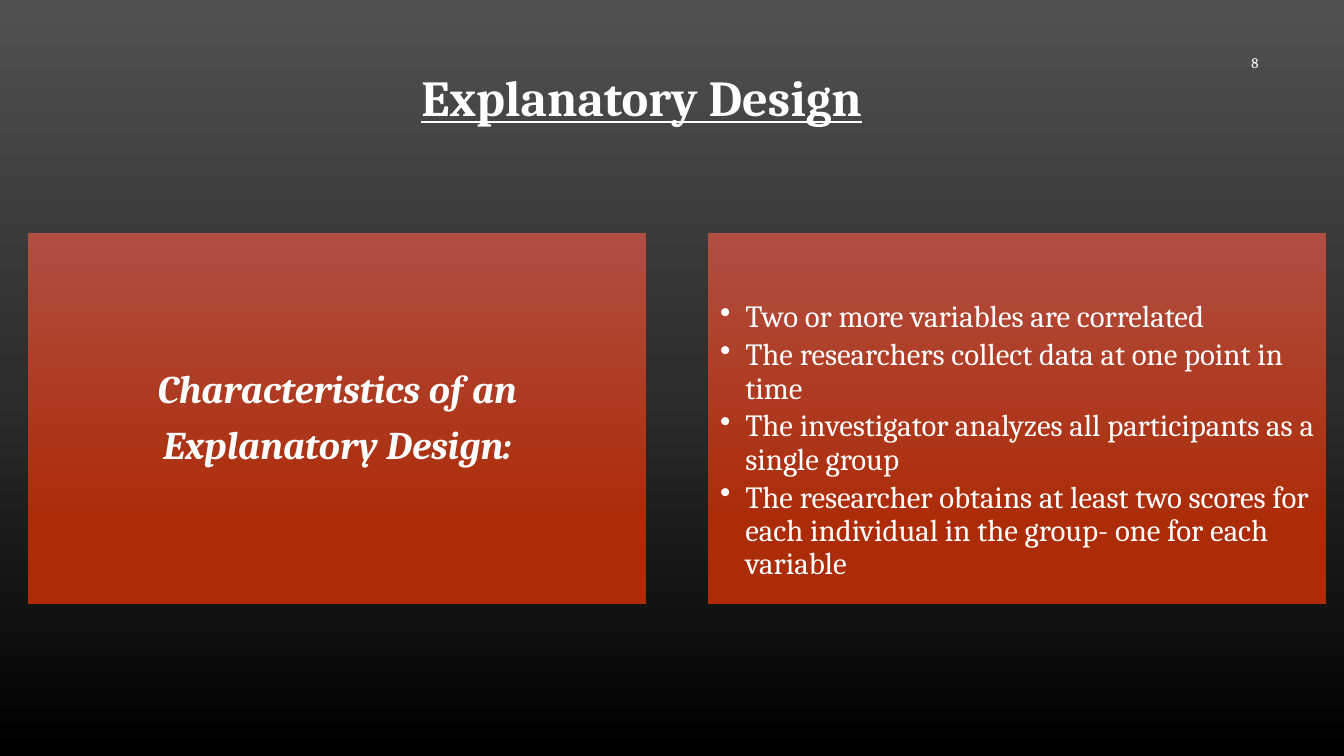
from copy import deepcopy
from dataclasses import dataclass

from pptx import Presentation
from pptx.dml.color import RGBColor
from pptx.enum.shapes import MSO_SHAPE
from pptx.enum.text import MSO_ANCHOR, MSO_AUTO_SIZE, PP_ALIGN
from pptx.oxml.ns import qn
from pptx.util import Inches, Pt
from lxml.etree import SubElement


@dataclass(frozen=True)
class Theme:
    """Colours, gradients, font and type sizes of the deck."""
    font: str = "Cambria"
    text: str = "FFFFFF"
    backdrop: tuple = ((0, "515151"), (0.5, "2E2E2E"), (1, "000000"))
    panel: tuple = ((0, "B14E42"), (0.78, "AC2C08"))
    title_size: float = 36
    heading_size: float = 28
    bullet_size: float = 22
    number_size: float = 10.5


THEME = Theme()
SLIDE_WIDTH, SLIDE_HEIGHT = 13.33, 7.5
PANEL_LEFT, PANEL_TOP, PANEL_WIDTH, PANEL_HEIGHT = 0.28, 2.31, 6.13, 3.68
PANEL_PITCH = PANEL_WIDTH * 1.1
PADDING = 0.12
HEADING = ("Characteristics of an", "Explanatory Design:")
BULLETS = (
    "Two or more variables are correlated",
    "The researchers collect data at one point in time",
    "The investigator analyzes all participants as a single group",
    "The researcher obtains at least two scores for each individual in the group- one for each variable",
)


def fill_gradient(fill, owner, stops):
    """Fill with a top-to-bottom gradient of (position, colour) stops."""
    fill.gradient()
    fill.gradient_angle = 270
    stop_list = owner.find(".//" + qn("a:gsLst"))
    for _ in stops[2:]:
        stop_list.append(deepcopy(stop_list[-1]))
    for stop, (position, color) in zip(fill.gradient_stops, stops):
        stop.position = position
        stop.color.rgb = RGBColor.from_string(color)


def format_paragraph(para, size, align, **styles):
    """Set the alignment and font of a paragraph."""
    para.alignment = align
    para.font.name = THEME.font
    para.font.size = Pt(size)
    para.font.color.rgb = RGBColor.from_string(THEME.text)
    for style, value in styles.items():
        setattr(para.font, style, value)


def add_bullet(para, indent):
    """Give a paragraph a round bullet with a hanging indent."""
    properties = para._p.get_or_add_pPr()
    properties.set("marL", str(Inches(indent)))
    properties.set("indent", str(-Inches(indent)))
    SubElement(properties, qn("a:buChar"), char="•")


def place_title(page, text, left, top, width, height):
    """Move and format the title placeholder."""
    title = page.shapes.title
    title.left, title.top, title.width, title.height = map(Inches, (left, top, width, height))
    title.text_frame.text = text
    title.text_frame.auto_size = MSO_AUTO_SIZE.NONE
    title.text_frame.vertical_anchor = MSO_ANCHOR.TOP
    format_paragraph(title.text_frame.paragraphs[0], THEME.title_size,
                     PP_ALIGN.CENTER, bold=True, underline=True)


def add_page_number(page, number, left, top, width, height):
    """Add the page number, right-aligned in its box."""
    frame = page.shapes.add_textbox(*map(Inches, (left, top, width, height))).text_frame
    frame.word_wrap = True
    frame.vertical_anchor = MSO_ANCHOR.MIDDLE
    frame.text = str(number)
    format_paragraph(frame.paragraphs[0], THEME.number_size, PP_ALIGN.RIGHT)


def add_panel(page, column, lines, size, gap, anchor, align,
              top_padding=PADDING, bullet_indent=0, **styles):
    """Add a gradient panel in a column, with one paragraph per line."""
    left = PANEL_LEFT + column * PANEL_PITCH
    box = page.shapes.add_shape(MSO_SHAPE.RECTANGLE, *map(
        Inches, (left, PANEL_TOP, PANEL_WIDTH, PANEL_HEIGHT)))
    box.shadow.inherit = False
    box.line.fill.background()
    fill_gradient(box.fill, box._element, THEME.panel)
    frame = box.text_frame
    frame.word_wrap = True
    frame.vertical_anchor = anchor
    frame.margin_left = frame.margin_right = frame.margin_bottom = Inches(PADDING)
    frame.margin_top = Inches(top_padding)
    frame.text = "\n".join(lines)
    for para in frame.paragraphs:
        if bullet_indent:
            add_bullet(para, bullet_indent)
        para.line_spacing = 0.9
        para.space_after = Pt(size * gap)
        format_paragraph(para, size, align, **styles)


def build_slide(deck):
    """Build the slide with a heading panel and a bullet panel."""
    page = deck.slides.add_slide(deck.slide_layouts[5])
    fill_gradient(page.background.fill, page._element, THEME.backdrop)
    add_page_number(page, 8, 9.58, 0.42, 3, 0.4)
    place_title(page, "Explanatory Design", 2.77, 0.61, 7.19, 0.71)
    add_panel(page, 0, HEADING, THEME.heading_size, 0.35, MSO_ANCHOR.MIDDLE,
              PP_ALIGN.CENTER, bold=True, italic=True)
    add_panel(page, 1, BULLETS, THEME.bullet_size, 0.15, MSO_ANCHOR.TOP,
              PP_ALIGN.LEFT, top_padding=0.68, bullet_indent=0.25)


def main():
    """Create and save the deck."""
    deck = Presentation()
    deck.slide_width, deck.slide_height = Inches(SLIDE_WIDTH), Inches(SLIDE_HEIGHT)
    build_slide(deck)
    deck.save("out.pptx")


if __name__ == "__main__":
    main()
